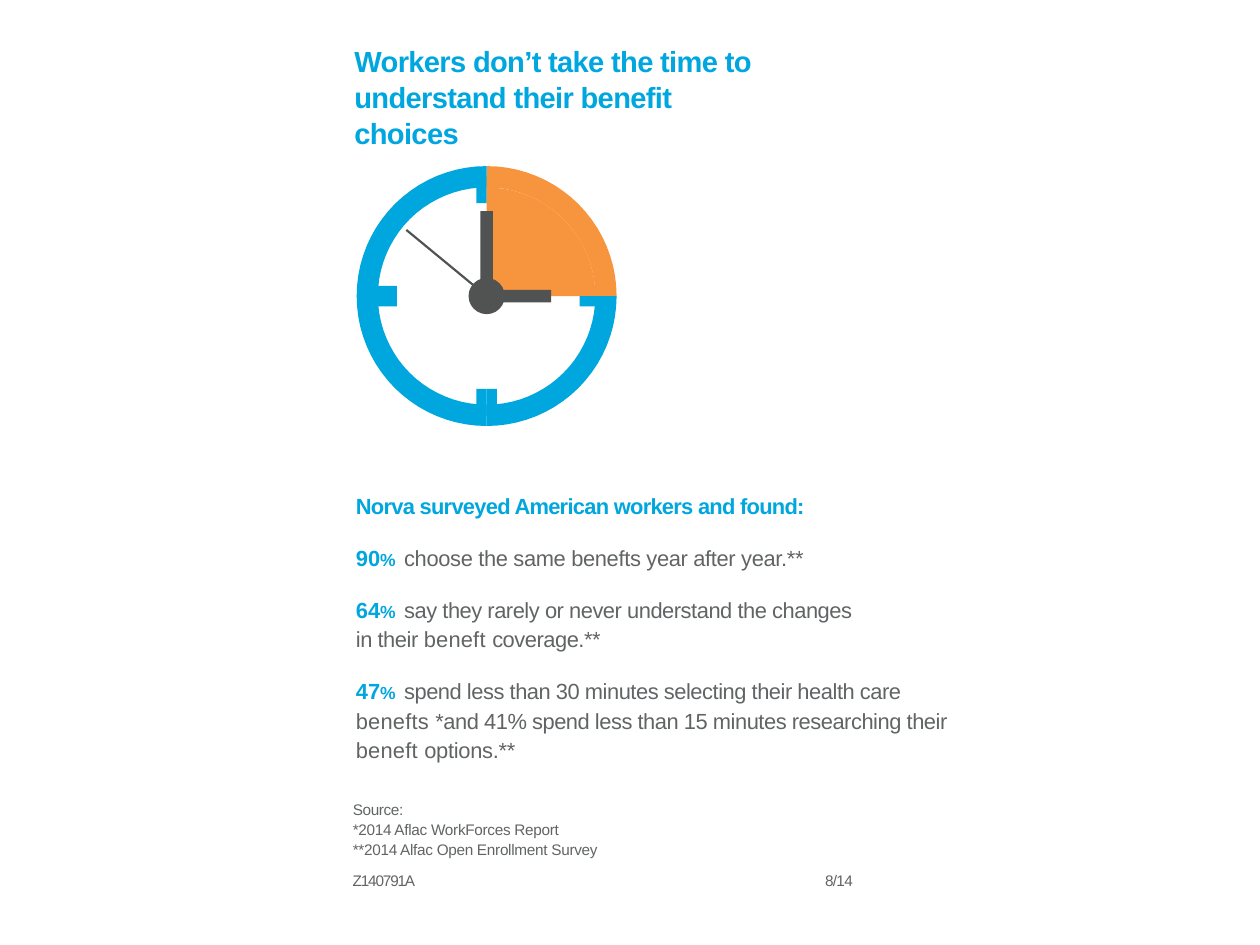
import math
from dataclasses import dataclass

import pptx
import pptx.dml.color
import pptx.enum.shapes
import pptx.enum.text
import pptx.oxml
import pptx.oxml.ns
import pptx.util

HEADLINE = "Workers don’t take the time to understand their benefit choices"

# Each paragraph: marL (grid columns), space before, line spacing, lines of (style, text, tracking)
SURVEY = [
    (0.3, 0, 1, [[("lead", "Norva surveyed American workers and found:", -0.3)]]),
    (0.3, 10, 1.13, [[("lead", "90", 0), ("percent", "% ", 0.8),
                      ("finding", "choose the same benefts year after year.**", -0.15)]]),
    (0.3, 10, 1.13, [[("lead", "64", 0), ("percent", "% ", 0.8),
                      ("finding", "say they rarely or never understand the changes", -0.2)],
                     [("finding", "in their ", -0.2), ("finding", "beneft ", 0.1),
                      ("finding", "coverage.**", -0.2)]]),
    (0.3, 10, 1.13, [[("lead", "47", 0), ("percent", "% ", 0.8),
                      ("finding", "spend less than 30 minutes selecting their health care", -0.2)],
                     [("finding", "benefts ", 0.1),
                      ("finding", "*and 41% spend less than 15 minutes researching their", -0.2)],
                     [("finding", "beneft ", 0.1), ("finding", "options.**", -0.1)]]),
    (0.1, 17, 1, [[("note", "Source:", -0.15)]]),
    (0.1, 0.8, 1, [[("note", "*2014 Aflac WorkForces Report", -0.1)]]),
    (0.1, 0.8, 1, [[("note", "**2014 Alfac Open Enrollment Survey", -0.1)]]),
]
FOOTERS = [(22.3, "Z140791A", -0.5), (52.3, "8/14", -0.3)]

COLUMNS, ROWS = 80, 60
CENTER = (30.9, 18.8)
OUTER, INNER = 8.25, 6.9
TICK_WIDTH, TICK_LENGTH = 0.65, 1.7


@dataclass(frozen=True)
class Theme:
    blue: str = "00A6DE"
    orange: str = "F7943E"
    hand: str = "515252"
    grey: str = "616465"
    font: str = "Arial"

    def style(self, name):
        """Return size, colour and boldness of a text style."""
        return {
            "headline": (13.3, self.blue, True),
            "lead": (10, self.blue, True),
            "percent": (8, self.blue, True),
            "finding": (10, self.grey, False),
            "note": (7, self.grey, False),
        }[name]


THEME = Theme()
deck = pptx.Presentation()
deck.slide_width = pptx.util.Inches(8)
deck.slide_height = pptx.util.Inches(6)
CELL = deck.slide_width // COLUMNS
slide = deck.slides.add_slide(deck.slide_layouts[1])


def grid(value):
    return pptx.util.Emu(round(value * CELL))


def rgb(code):
    return pptx.dml.color.RGBColor.from_string(code)


def paint(shape, color):
    shape.shadow.inherit = False
    shape.fill.solid()
    shape.fill.fore_color.rgb = rgb(color)
    shape.line.fill.background()


def add_box(kind, left, top, width, height, color):
    paint(slide.shapes.add_shape(kind, *map(grid, (left, top, width, height))), color)


def add_quarter(start, inner, outer, color):
    """Draw a quarter of a ring, clockwise from start degrees (0 is three o'clock)."""
    angles = [math.radians(start + step * 4.5) for step in range(21)]
    arcs = [(outer, angles), (inner, angles[::-1] if inner else angles[:1])]
    points = [tuple(grid(c + radius * turn(angle)) for c, turn in zip(CENTER, (math.cos, math.sin)))
              for radius, arc in arcs for angle in arc]
    outline = slide.shapes.build_freeform(*points[0])
    outline.add_line_segments(points[1:], close=True)
    paint(outline.convert_to_shape(), color)


def add_clock():
    x, y = CENTER
    rectangle = pptx.enum.shapes.MSO_SHAPE.RECTANGLE
    add_quarter(270, 0, INNER, THEME.orange)
    for start in (270, 180, 90, 0):
        add_quarter(start, INNER, OUTER, THEME.orange if start == 270 else THEME.blue)
    add_box(pptx.enum.shapes.MSO_SHAPE.OVAL, x - 1.15, y - 1.15, 2.3, 2.3, THEME.hand)
    add_box(rectangle, x - 0.4, y - 5.4, 0.8, 5.4, THEME.hand)
    add_box(rectangle, x, y - 0.4, 4.1, 0.8, THEME.hand)

    second = slide.shapes.add_connector(pptx.enum.shapes.MSO_CONNECTOR.STRAIGHT,
                                        *map(grid, (x - 5.1, y - 4.2, x, y)))
    second.line.color.rgb = rgb(THEME.hand)
    second.line.width = pptx.util.Pt(1)
    second._element.spPr.append(pptx.oxml.parse_xml(
        "<a:effectLst %s/>" % pptx.oxml.ns.nsdecls("a")))

    for side in (-TICK_WIDTH, 0):
        for along in (-5.9 - TICK_LENGTH, 5.9):
            color = THEME.orange if side == 0 and along < 0 else THEME.blue
            add_box(rectangle, x + side, y + along, TICK_WIDTH, TICK_LENGTH, color)
        for along in (-5.7 - TICK_LENGTH, 5.9):
            color = THEME.orange if side < 0 and along > 0 else THEME.blue
            add_box(rectangle, x + along, y + side, TICK_LENGTH, TICK_WIDTH, color)


def place(shape, left, top, width, height):
    """Move a text shape on the grid and clear its insets."""
    shape.left, shape.top, shape.width, shape.height = map(grid, (left, top, width, height))
    frame = shape.text_frame
    frame.margin_left = frame.margin_right = frame.margin_top = frame.margin_bottom = 0
    frame.word_wrap = True
    frame.auto_size = pptx.enum.text.MSO_AUTO_SIZE.NONE
    frame.vertical_anchor = pptx.enum.text.MSO_ANCHOR.TOP
    return frame


def write(paragraph, indent, before, spacing, lines):
    properties = paragraph._p.get_or_add_pPr()
    properties.set("marL", str(grid(indent)))
    properties.set("indent", "0")
    properties.append(pptx.oxml.parse_xml("<a:buNone %s/>" % pptx.oxml.ns.nsdecls("a")))
    paragraph.alignment = pptx.enum.text.PP_ALIGN.LEFT
    paragraph.space_before = pptx.util.Pt(before)
    paragraph.line_spacing = float(spacing)
    for number, line in enumerate(lines):
        if number:
            paragraph.add_line_break()
        for style, words, tracking in line:
            run = paragraph.add_run()
            run.text = words
            size, color, run.font.bold = THEME.style(style)
            run.font.size = pptx.util.Pt(size)
            run.font.name = THEME.font
            run.font.color.rgb = rgb(color)
            run._r.get_or_add_rPr().set("spc", str(round(tracking * 100)))


add_clock()

headline = place(slide.shapes.title, 22.4, 2.7, 26, 6.9)
write(headline.paragraphs[0], 0.1, 0, 1.03, [[("headline", HEADLINE, -0.3)]])

survey = place(slide.placeholders[1], 22.3, 31.3, 40, 22.8)
for index, entry in enumerate(SURVEY):
    write(survey.add_paragraph() if index else survey.paragraphs[0], *entry)

for left, label, tracking in FOOTERS:
    footer = place(slide.shapes.add_textbox(0, 0, 0, 0), left, 55.3, 6, 1.3)
    write(footer.paragraphs[0], 0.1, 0, 1, [[("note", label, tracking)]])

deck.save("out.pptx")
